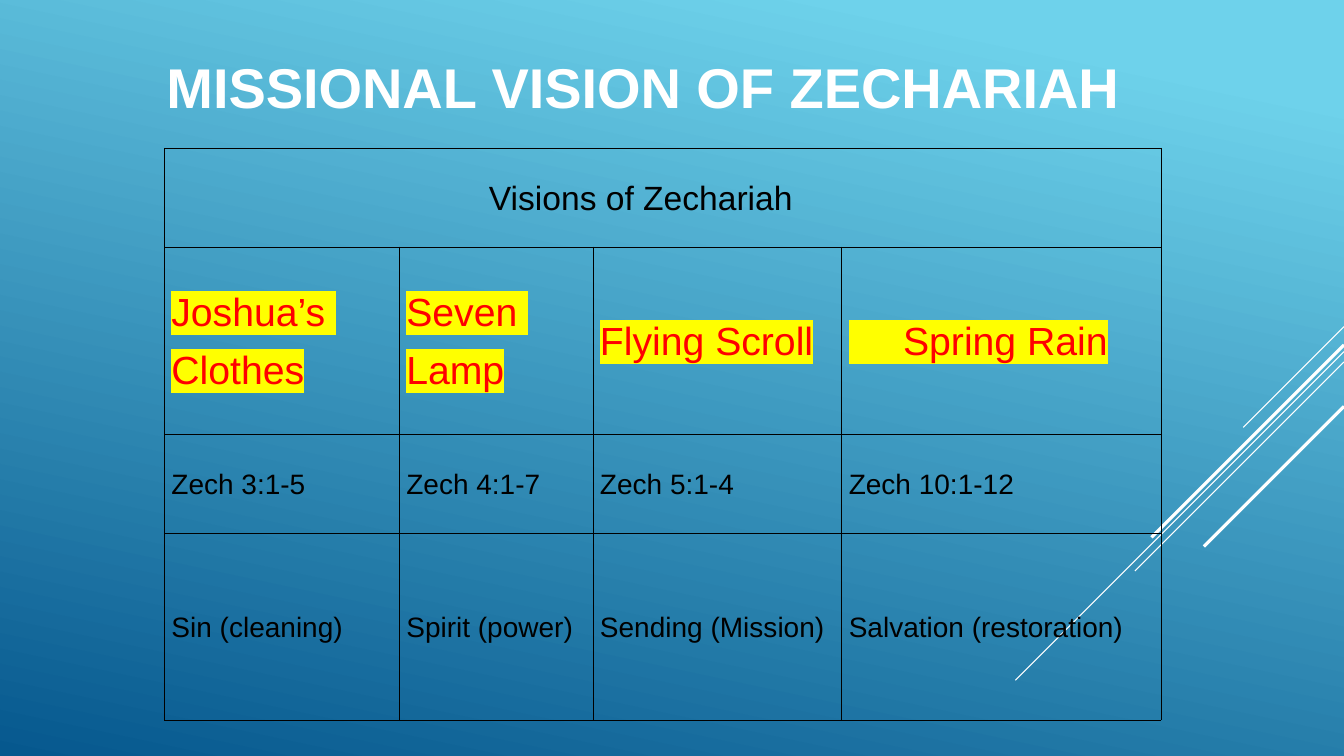
from lxml.etree import SubElement
from pptx import Presentation
from pptx.dml.color import RGBColor
from pptx.enum.text import MSO_ANCHOR, MSO_AUTO_SIZE, PP_ALIGN
from pptx.oxml import parse_xml
from pptx.oxml.ns import nsdecls, qn
from pptx.util import Cm, Pt


def paint(color, code):
    color.rgb = RGBColor.from_string(code)


def write(para, text, size, code, mark=None):
    run = para.add_run()
    run.text = text
    run.font.size = Pt(size)
    paint(run.font.fill.fore_color if run.font.fill.solid() else run.font.color, code)
    if mark:
        light = SubElement(run.font._element, qn("a:highlight"))
        SubElement(light, qn("a:srgbClr"), val=mark)
    run.font.name = "Arial"
    return run


deck = Presentation()
deck.slide_width, deck.slide_height = Cm(33.87), Cm(19.05)
slide = deck.slides.add_slide(deck.slide_layouts[5])

# Gradient background
fill = slide.background.fill
fill.gradient()
fill.gradient_angle = 258
for stop, (place, code) in zip(fill.gradient_stops, [(0.1, "6ED2EB"), (1, "06588E")]):
    stop.position = place
    paint(stop.color, code)

# Diagonal lines falling at 45 degrees from the right edge
for top, reach, width in [(8.23, 2.54, 0.75), (8.86, 8.28, 0.75), (9.12, 5.27, 0.75),
                          (8.69, 4.85, 2.25), (10.24, 3.53, 2.25)]:
    line = slide.shapes.add_connector(1, Cm(33.87), Cm(top), Cm(33.87 - reach), Cm(top + reach))
    paint(line.line.color, "FFFFFF")
    line.line.width = Pt(width)
    SubElement(line._element.spPr, qn("a:effectLst"))

# Title
title = slide.shapes.title
title.left, title.top, title.width, title.height = Cm(3.94), Cm(0.08), Cm(25.8), Cm(4.19)
frame = title.text_frame
frame.auto_size = MSO_AUTO_SIZE.NONE
frame.vertical_anchor = MSO_ANCHOR.MIDDLE
frame.paragraphs[0].alignment = PP_ALIGN.LEFT
write(frame.paragraphs[0], "MISSIONAL VISION OF ZECHARIAH", 40, "FFFFFF").font.bold = True

# Table: each row has its texts, height, text size, colour and highlight
rows = [
    (["Visions of Zechariah", "", "", ""], 2.49, 24, "000000", None),
    (["Joshua’s \nClothes", "Seven \nLamp", "Flying Scroll", "     Spring Rain"],
     4.72, 28, "FF0000", "FFFF00"),
    (["Zech 3:1-5", "Zech 4:1-7", "Zech 5:1-4", "Zech 10:1-12"], 2.49, 20, "000000", None),
    (["Sin (cleaning)", "Spirit (power)", "Sending (Mission) ", "Salvation (restoration)"],
     4.72, 20, "000000", None),
]
widths = [5.92, 4.88, 6.27, 8.05]
table = slide.shapes.add_table(4, 4, Cm(4.14), Cm(3.73), Cm(25.12), Cm(14.42)).table
table.first_row = table.horz_banding = False
for col, width in zip(table.columns, widths):
    col.width = Cm(width)
table.cell(0, 0).merge(table.cell(0, 3))

for r, (texts, height, size, code, mark) in enumerate(rows):
    table.rows[r].height = Cm(height)
    for c, text in enumerate(texts):
        cell = table.cell(r, c)
        cell.fill.background()
        cell.vertical_anchor = MSO_ANCHOR.MIDDLE
        cell.margin_left = cell.margin_right = Cm(0.18)
        cell.margin_top = cell.margin_bottom = Cm(0.05)
        # Thin black borders
        for n, side in enumerate(["lnL", "lnR", "lnT", "lnB"]):
            cell._tc.tcPr.insert(n, parse_xml(
                f'<a:{side} {nsdecls("a")} w="3556"><a:solidFill>'
                f'<a:srgbClr val="000000"/></a:solidFill></a:{side}>'))
        # Text, one paragraph a line
        for n, part in enumerate(text.split("\n") if text else []):
            body = cell.text_frame
            para = body.add_paragraph() if n else body.paragraphs[0]
            para.alignment = PP_ALIGN.JUSTIFY
            para.line_spacing = 1.07
            para.space_after = Pt(8)
            write(para, part, size, code, mark)

# Heading row is indented
head = table.cell(0, 0).text_frame.paragraphs[0]
head._p.get_or_add_pPr().set("marL", str(Cm(8)))

deck.save("out.pptx")
